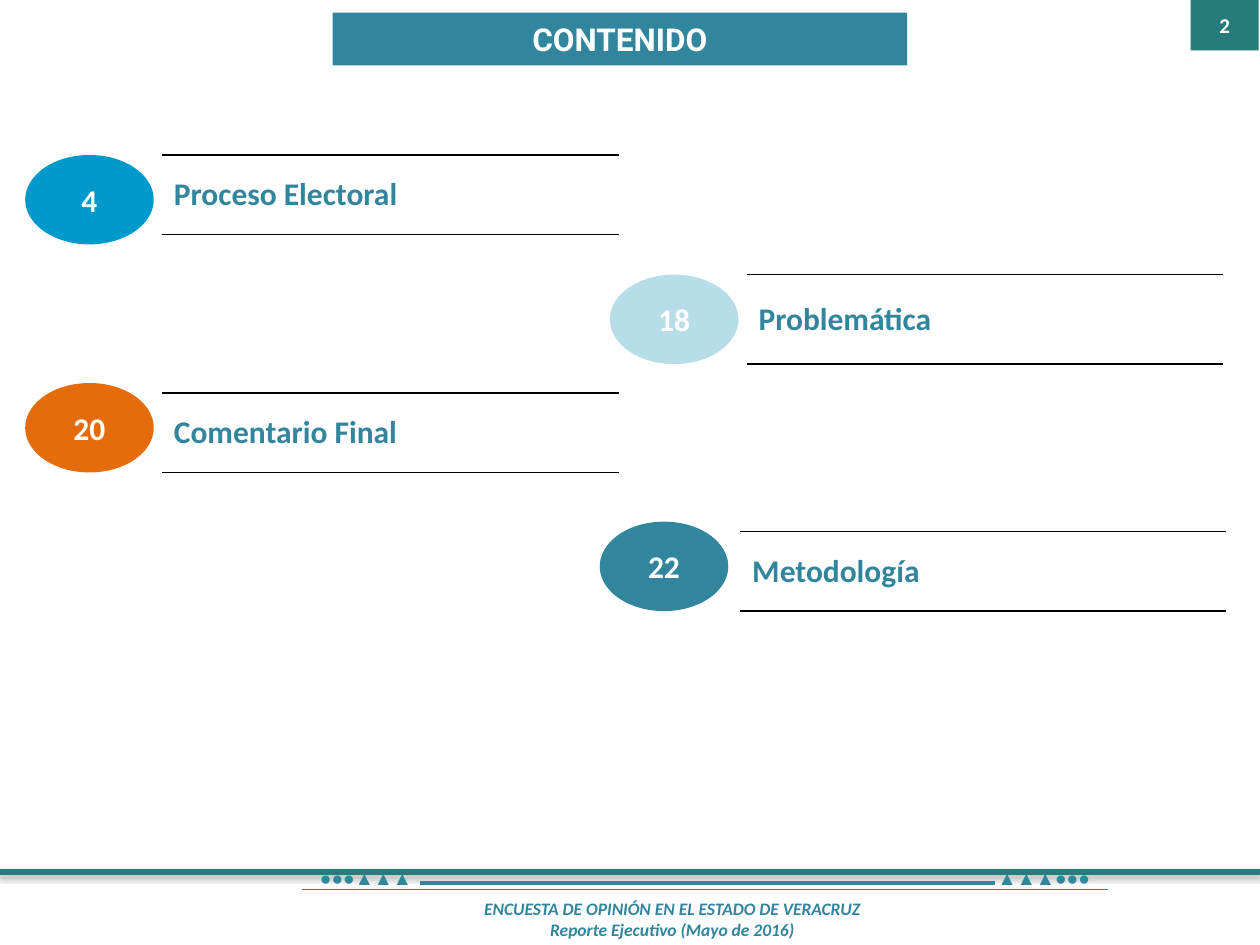
from collections import namedtuple

from lxml import etree
from pptx import Presentation
from pptx.dml.color import RGBColor
from pptx.enum.shapes import MSO_CONNECTOR, MSO_SHAPE
from pptx.enum.text import MSO_ANCHOR, MSO_AUTO_SIZE, PP_ALIGN
from pptx.oxml.ns import qn
from pptx.util import Inches, Pt

LEFT, CENTER = PP_ALIGN.LEFT, PP_ALIGN.CENTER
MIDDLE, BOTTOM = MSO_ANCHOR.MIDDLE, MSO_ANCHOR.BOTTOM
OVAL, RECTANGLE = MSO_SHAPE.OVAL, MSO_SHAPE.RECTANGLE
STRAIGHT = MSO_CONNECTOR.STRAIGHT
NO_AUTOFIT = MSO_AUTO_SIZE.NONE

# The slide is a grid of 100 columns by 75 rows; boxes are given in grid units
SLIDE_WIDTH, SLIDE_HEIGHT = Inches(10), Inches(7.5)
COLUMN, ROW = SLIDE_WIDTH / 100, SLIDE_HEIGHT / 75
Box = namedtuple("Box", "left top width height")


class Theme:
    white, black = "FFFFFF", "000000"
    teal, dark_teal, ornament_teal = "31859C", "277C7B", "31869B"
    blue, orange, pale_blue = "0099CC", "E46C0A", "B7DEE8"
    title = {"name": "Roboto", "size": Pt(18), "bold": True, "color": white}
    badge = {"name": "Calibri", "size": Pt(18), "bold": True, "color": white}
    page = {"name": "Calibri", "size": Pt(12), "bold": True, "color": white}
    topic = {"name": "Calibri", "size": Pt(18), "bold": True, "color": teal}
    footer = {"name": "Calibri", "size": Pt(10), "bold": True, "italic": True, "color": teal}
    ornament = {"name": "Arial", "size": Pt(11), "color": ornament_teal}


def rgb(color):
    return RGBColor.from_string(color)


def to_emu(box):
    return (round(box.left * COLUMN), round(box.top * ROW),
            round(box.width * COLUMN), round(box.height * ROW))


def write(frame, lines, style, align=CENTER):
    for index, line in enumerate(lines):
        paragraph = frame.add_paragraph() if index else frame.paragraphs[0]
        paragraph.alignment = align
        font = paragraph.add_run().font
        paragraph.runs[0].text = line
        for key, value in style.items():
            if key == "color":
                font.color.rgb = rgb(value)
            else:
                setattr(font, key, value)


def add_block(slide, kind, box, fill, text=None, style=None):
    block = slide.shapes.add_shape(kind, *to_emu(box))
    block.shadow.inherit = False
    block.fill.solid()
    block.fill.fore_color.rgb = rgb(fill)
    block.line.fill.background()
    if text:
        block.text_frame.vertical_anchor = MIDDLE
        write(block.text_frame, [text], style)
    return block


def add_rule(slide, left, right, row, color, weight):
    left, y, width, _ = to_emu(Box(left, row, right - left, 0))
    rule = slide.shapes.add_connector(STRAIGHT, left, y, left + width, y)
    rule.line.color.rgb = rgb(color)
    rule.line.width = Pt(weight)
    return etree.SubElement(rule.element.spPr, qn("a:effectLst"))


def add_soft_shadow(effects):
    shadow = etree.SubElement(effects, qn("a:outerShdw"), blurRad=str(Pt(3.1)),
                              dist=str(Pt(1.8)), dir="5400000", rotWithShape="0")
    color = etree.SubElement(shadow, qn("a:srgbClr"), val=Theme.black)
    etree.SubElement(color, qn("a:alpha"), val="35000")


def set_borders(cell, colors):
    """Draw the sides in the order left, right, top, bottom; None hides a side."""
    properties = cell._tc.get_or_add_tcPr()
    for side, color in zip("LRTB", colors):
        border = etree.SubElement(properties, qn(f"a:ln{side}"), w=str(Pt(1)))
        if color:
            fill = etree.SubElement(border, qn("a:solidFill"))
            etree.SubElement(fill, qn("a:srgbClr"), val=color)
        else:
            etree.SubElement(border, qn("a:noFill"))


def add_single_cell(slide, box, text, style, align, borders, cell_format, fill=None):
    table = slide.shapes.add_table(1, 1, *to_emu(box)).table
    table.first_row = table.horz_banding = False
    cell = table.cell(0, 0)
    for key, value in cell_format.items():
        setattr(cell, key, value)
    set_borders(cell, borders)
    if fill:
        cell.fill.solid()
        cell.fill.fore_color.rgb = rgb(fill)
    else:
        cell.fill.background()
    write(cell.text_frame, [text], style, align)


def add_title(slide, box, text):
    title = slide.shapes.title
    title.left, title.top, title.width, title.height = to_emu(box)
    # Banner outline with snipped diagonal corners
    outline = etree.SubElement(title.element.spPr, qn("a:prstGeom"), prst="snip2DiagRect")
    guides = etree.SubElement(outline, qn("a:avLst"))
    for name, value in (("adj1", 50000), ("adj2", 16667)):
        etree.SubElement(guides, qn("a:gd"), name=name, fmla=f"val {value}")
    title.fill.solid()
    title.fill.fore_color.rgb = rgb(Theme.teal)
    frame = title.text_frame
    frame.auto_size, frame.vertical_anchor = NO_AUTOFIT, MIDDLE
    write(frame, [text], Theme.title)


def add_footer(slide, box):
    band = add_block(slide, RECTANGLE, box, Theme.white)
    band.line.color.rgb = rgb(Theme.white)
    band.line.width = Pt(2)
    right = box.left + box.width
    add_soft_shadow(add_rule(slide, box.left - 0.2, right, box.top, Theme.dark_teal, 3))

    # Survey name
    caption = slide.shapes.add_textbox(*to_emu(Box(box.left + 30.5, box.top + 1.6, 45.7, 4.2)))
    frame = caption.text_frame
    frame.word_wrap, frame.vertical_anchor = True, MIDDLE
    for side in ("left", "top", "right", "bottom"):
        setattr(frame, f"margin_{side}", Inches(0.04))
    write(frame, ["ENCUESTA DE OPINIÓN EN EL ESTADO DE VERACRUZ",
                  "Reporte Ejecutivo (Mayo de 2016)"], Theme.footer)

    # Ornamental rules and marks
    add_rule(slide, box.left + 33.3, box.left + 79, box.top + 0.9, Theme.teal, 2)
    add_rule(slide, box.left + 24, box.left + 87.9, box.top + 1.4, Theme.teal, 0.75)
    tight = {"margin_left": Inches(0.01), "margin_right": Inches(0.01),
             "margin_top": Inches(0.01), "margin_bottom": 0, "vertical_anchor": BOTTOM}
    for offset, marks in ((24.9, "●●●▲▲▲"), (78.7, "▲▲▲●●●")):
        add_single_cell(slide, Box(box.left + offset, box.top - 0.7, 8.3, 2.1), marks,
                        Theme.ornament, CENTER, [None] * 4, tight)


def add_topic(slide, badge_box, topic_box, page, topic, color):
    borders = [Theme.white, Theme.white, Theme.black, Theme.black]
    add_single_cell(slide, topic_box, topic, Theme.topic, LEFT, borders,
                    {"vertical_anchor": MIDDLE}, Theme.white)
    add_block(slide, OVAL, badge_box, color, page, Theme.badge)


def add_contents(slide):
    badge_width, badge_height = 10.2, 7.1
    # page, topic, colour, badge left and top, topic box
    topics = [
        ("4", "Proceso Electoral", Theme.blue, 2, 12.3, Box(12.8, 12.3, 36.4, 6.3)),
        ("20", "Comentario Final", Theme.orange, 2, 30.4, Box(12.8, 31.2, 36.4, 6.3)),
        ("18", "Problemática", Theme.pale_blue, 48.4, 21.8, Box(59.2, 21.8, 37.9, 7.1)),
        ("22", "Metodología", Theme.teal, 47.6, 41.4, Box(58.7, 42.2, 38.7, 6.3)),
    ]
    for page, topic, color, left, top, topic_box in topics:
        badge_box = Box(left, top, badge_width, badge_height)
        add_topic(slide, badge_box, topic_box, page, topic, color)


def main():
    presentation = Presentation()
    presentation.slide_width, presentation.slide_height = SLIDE_WIDTH, SLIDE_HEIGHT
    slide = presentation.slides.add_slide(presentation.slide_layouts[5])
    add_footer(slide, Box(0, 69.2, 100, 5.8))
    add_title(slide, Box(26.4, 1, 45.6, 4.2), "CONTENIDO")
    add_block(slide, RECTANGLE, Box(94.5, 0, 5.4, 4), Theme.dark_teal, "2", Theme.page)
    add_contents(slide)
    presentation.save("out.pptx")


if __name__ == "__main__":
    main()
